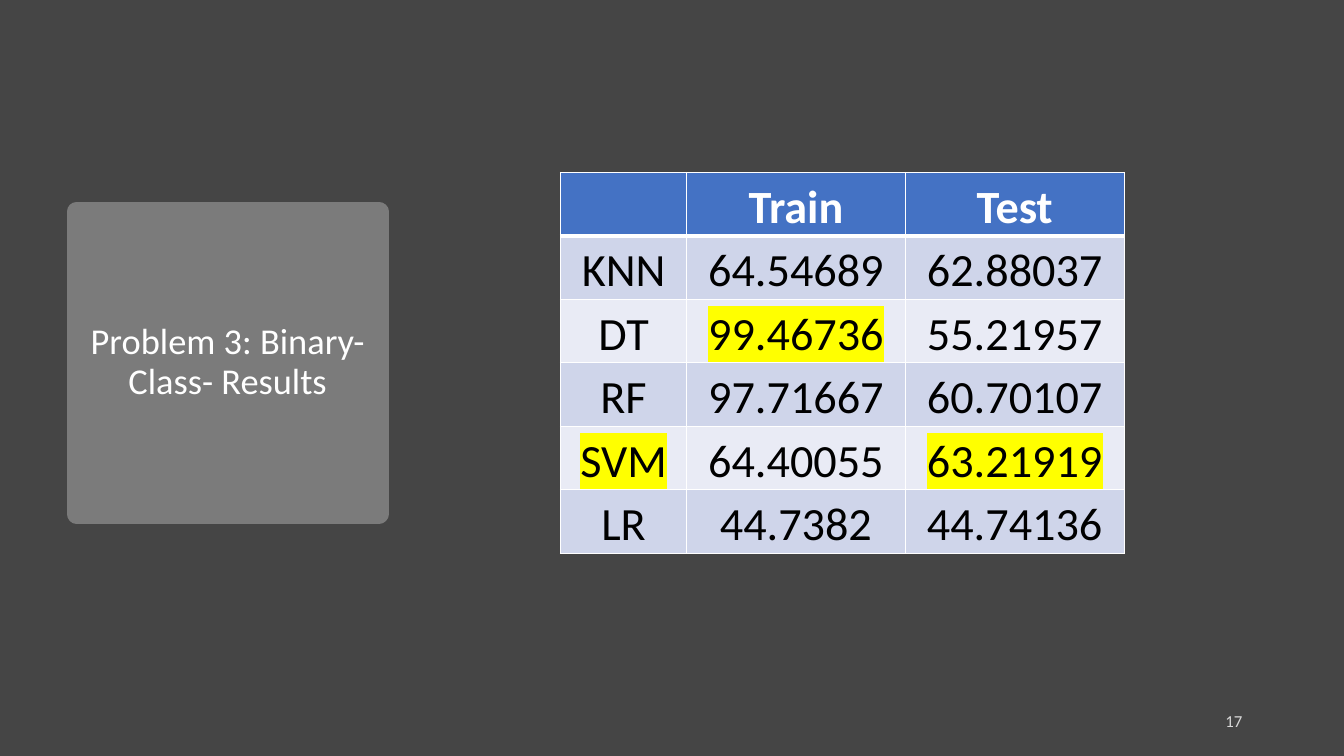
from lxml import etree
from pptx import Presentation
from pptx.dml.color import RGBColor
from pptx.enum.shapes import MSO_SHAPE
from pptx.enum.text import MSO_ANCHOR, PP_ALIGN
from pptx.oxml.ns import qn
from pptx.util import Inches, Pt

RECTANGLE = MSO_SHAPE.RECTANGLE
MIDDLE, BOTTOM = MSO_ANCHOR.MIDDLE, MSO_ANCHOR.BOTTOM
CENTER, RIGHT = PP_ALIGN.CENTER, PP_ALIGN.RIGHT

# Content
TITLE = "Problem 3: Binary-Class- Results"
PAGE_NUMBER = "17"
RESULTS = [
    ("", "Train", "Test"),
    ("KNN", "64.54689", "62.88037"),
    ("DT", "99.46736", "55.21957"),
    ("RF", "97.71667", "60.70107"),
    ("SVM", "64.40055", "63.21919"),
    ("LR", "44.7382", "44.74136"),
]
HIGHLIGHTED = {"99.46736", "SVM", "63.21919"}

FONT = "Calibri"
COLORS = {
    "background": "454545",
    "title box": "7B7B7B",
    "header": "4472C4",
    "odd row": "CFD5EA",
    "even row": "E9EBF5",
    "highlight": "FFFF00",
    "light": "FFFFFF",
    "dark": "000000",
}
COLUMN_WIDTHS = [1.25, 2.17, 2.17]
ROW_HEIGHT = 0.63


def rgb(name):
    return RGBColor.from_string(COLORS[name])


def write(text_frame, text, size, color, alignment, bold=False):
    paragraph = text_frame.paragraphs[0]
    paragraph.alignment = alignment
    font = paragraph.font
    font.name, font.size, font.bold = FONT, Pt(size), bold
    font.color.rgb = rgb(color)
    if text:
        paragraph.add_run().text = text
    return paragraph


def add_color(parent, tag, name):
    element = etree.SubElement(parent, qn(tag))
    etree.SubElement(element, qn("a:srgbClr"), val=COLORS[name])


def set_borders(cell, bottom_width):
    properties = cell._tc.get_or_add_tcPr()
    widths = {"a:lnL": 1, "a:lnR": 1, "a:lnT": 1, "a:lnB": bottom_width}
    for index, (tag, width) in enumerate(widths.items()):
        line = etree.Element(qn(tag), w=str(Pt(width)))
        add_color(line, "a:solidFill", "light")
        properties.insert(index, line)


presentation = Presentation()
presentation.slide_width, presentation.slide_height = Inches(13.33), Inches(7.5)
slide = presentation.slides.add_slide(presentation.slide_layouts[6])
slide.background.fill.solid()
slide.background.fill.fore_color.rgb = rgb("background")

# Title box, its corners rounded by the thick outline
title_box = slide.shapes.add_shape(RECTANGLE, Inches(0.76), Inches(2.1), Inches(3), Inches(3))
title_box.shadow.inherit = False
title_box.fill.solid()
title_box.fill.fore_color.rgb = rgb("title box")
title_box.line.color.rgb = rgb("title box")
title_box.line.width = Pt(13.75)
etree.SubElement(title_box.line._get_or_add_ln(), qn("a:round"))
title_box.text_frame.word_wrap = True
title_box.text_frame.vertical_anchor = MIDDLE
write(title_box.text_frame, TITLE, 26, "light", CENTER).line_spacing = 0.9

# Page number in slightly transparent white
number_box = slide.shapes.add_textbox(Inches(9.42), Inches(6.95), Inches(3), Inches(0.4))
number_box.text_frame.word_wrap = True
number_box.text_frame.vertical_anchor = MIDDLE
number = write(number_box.text_frame, PAGE_NUMBER, 12, "light", RIGHT)
number.space_after = Pt(6)
for color in number._p.iter(qn("a:srgbClr")):
    etree.SubElement(color, qn("a:alpha"), val="80000")

# Results table
table = slide.shapes.add_table(
    len(RESULTS), len(COLUMN_WIDTHS), Inches(5.56), Inches(1.71),
    Inches(sum(COLUMN_WIDTHS)), Inches(ROW_HEIGHT * len(RESULTS)),
).table
for column, width in zip(table.columns, COLUMN_WIDTHS):
    column.width = Inches(width)

for row_index, values in enumerate(RESULTS):
    table.rows[row_index].height = Inches(ROW_HEIGHT)
    is_header = row_index == 0
    band = "header" if is_header else "odd row" if row_index % 2 else "even row"
    for column_index, value in enumerate(values):
        cell = table.cell(row_index, column_index)
        cell.margin_left = cell.margin_right = cell.margin_top = Inches(0.01)
        cell.margin_bottom = 0
        cell.vertical_anchor = BOTTOM
        cell.fill.solid()
        cell.fill.fore_color.rgb = rgb(band)
        set_borders(cell, 3 if is_header else 1)
        paragraph = write(cell.text_frame, value, 33, "light" if is_header else "dark",
                          CENTER, bold=is_header)
        if value in HIGHLIGHTED:
            add_color(paragraph.runs[0]._r.get_or_add_rPr(), "a:highlight", "highlight")

presentation.save("out.pptx")
